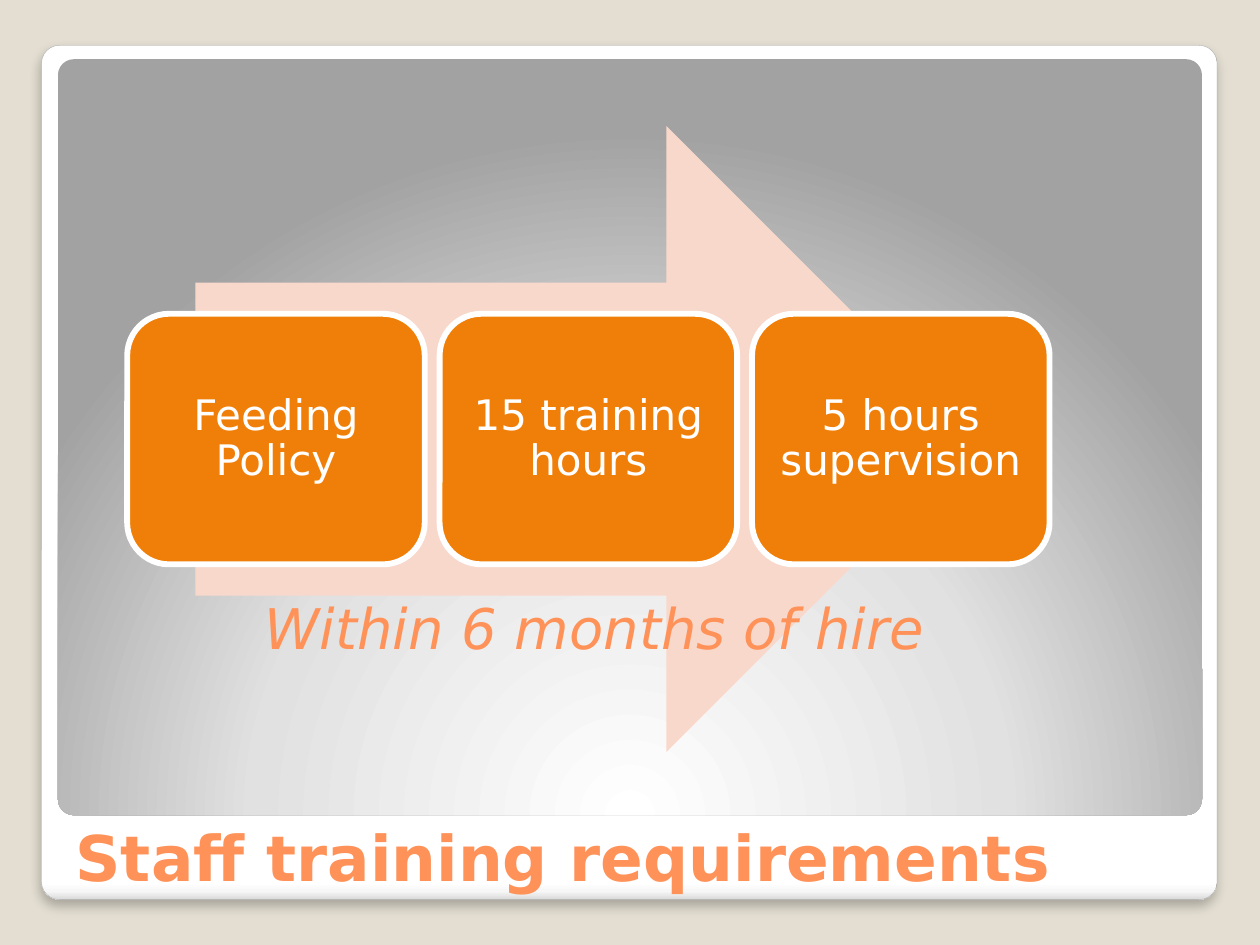
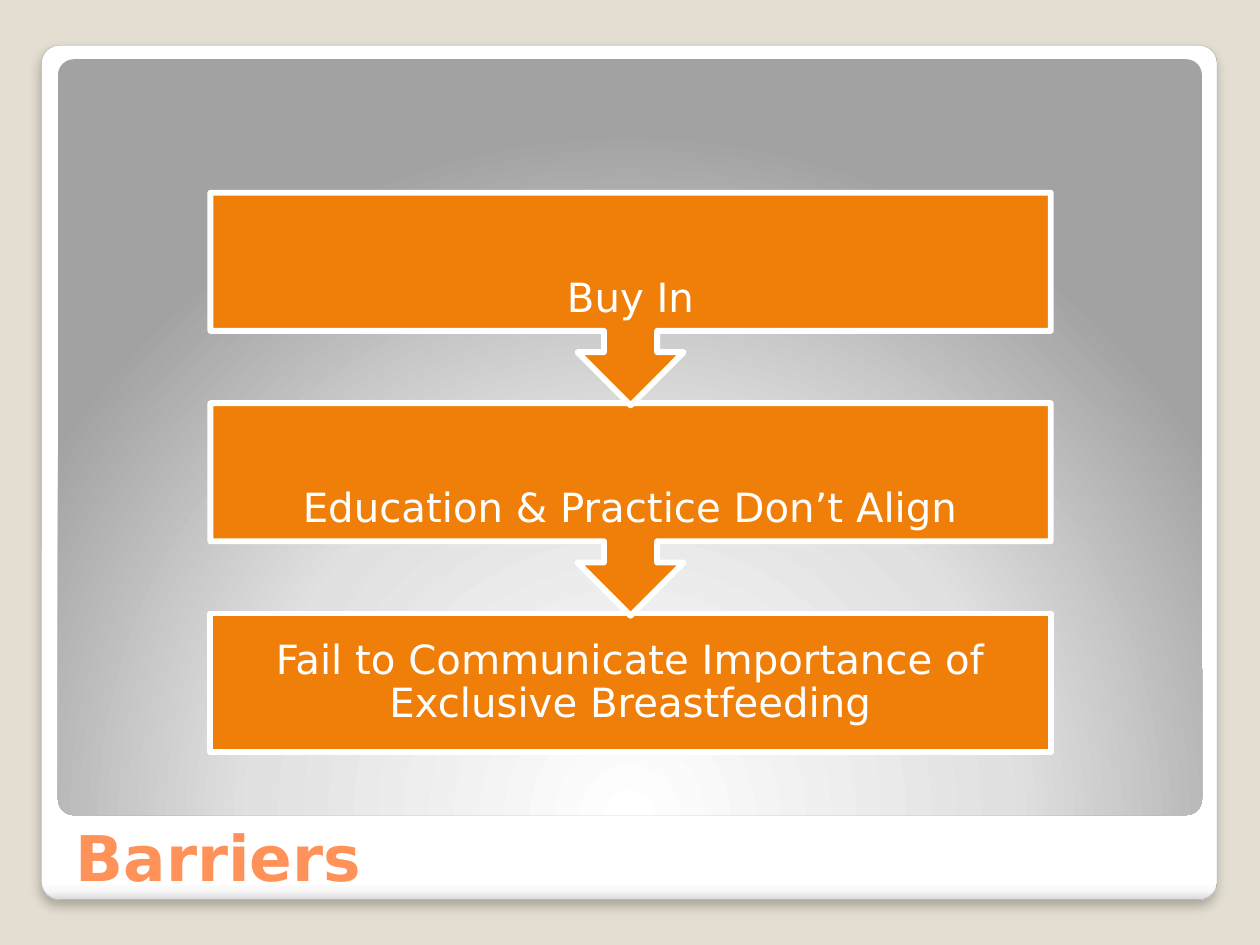
from collections import namedtuple

from lxml import etree
from pptx import Presentation
from pptx.dml.color import RGBColor as Rgb
from pptx.enum.shapes import MSO_SHAPE as Kind
from pptx.enum.text import MSO_ANCHOR as Anchor, MSO_AUTO_SIZE as Auto, PP_ALIGN as Align
from pptx.oxml import parse_xml
from pptx.oxml.ns import nsdecls, qn
from pptx.util import Inches, Pt

FONT = "DejaVu Sans"
WHITE = Rgb(0xFF, 0xFF, 0xFF)
BLACK = Rgb(0, 0, 0)
SAND = Rgb(0xE3, 0xDE, 0xD1)
CORAL = Rgb(0xFF, 0x92, 0x58)
ORANGE = Rgb(0xF0, 0x7F, 0x09)
BLUSH = Rgb(0xF9, 0xD8, 0xCC)
PALE = Rgb(0xF7, 0xF7, 0xF7)
LIGHT = Rgb(0xE1, 0xE1, 0xE1)
MIST = Rgb(0xDA, 0xDA, 0xDA)
GREY = Rgb(0xA2, 0xA2, 0xA2)
EDGE = Rgb(0xA4, 0xA4, 0xA4)

COLS, ROWS = 100, 75
ROUND = 0.021
LINEAR = '<a:lin ang="5400000" scaled="0"/>'
RADIAL = ('<a:path path="circle"><a:fillToRect l="50000" t="175000" '
          'r="50000" b="-75000"/></a:path>')


class Box(namedtuple("Box", "x y w h")):
    def share(self, x, y, w, h):
        return Box(self.x + x * self.w, self.y + y * self.h, w * self.w, h * self.h)

    def cells(self, x, y, w, h):
        return self.share(x / COLS, y / ROWS, w / COLS, h / ROWS)

    def size(self):
        return [Inches(n) for n in self]


PAGE = Box(0, 0, 10, 7.5)


def add_form(slide, kind, box, fill=None, line=None, width=3.35):
    form = slide.shapes.add_shape(kind, *box.size())
    form.shadow.inherit = False
    if fill is None:
        form.fill.background()
    else:
        form.fill.solid()
        form.fill.fore_color.rgb = fill
    if line is None:
        form.line.fill.background()
    else:
        form.line.color.rgb = line
        form.line.width = Pt(width)
    return form


def set_text(form, text, size, color=WHITE, align=Align.CENTER, anchor=Anchor.MIDDLE, pad=None):
    frame = form.text_frame
    frame.word_wrap = True
    frame.auto_size = Auto.NONE
    frame.vertical_anchor = anchor
    if pad is not None:
        frame.margin_left = frame.margin_right = Inches(pad)
        frame.margin_top = frame.margin_bottom = Inches(pad)
    frame.text = text
    para = frame.paragraphs[0]
    para.alignment = align
    para.font.name = FONT
    para.font.size = Pt(size)
    para.font.color.rgb = color
    return para


def set_blend(form, stops, way):
    marks = "".join(
        f'<a:gs pos="{pos * 1000}"><a:srgbClr val="{color}"/></a:gs>' for pos, color in stops)
    blend = parse_xml(
        f'<a:gradFill {nsdecls("a")} rotWithShape="1"><a:gsLst>{marks}</a:gsLst>{way}</a:gradFill>')
    props = form.element.spPr
    props.replace(props.find(qn("a:noFill")), blend)


def set_shade(form):
    glow = etree.SubElement(
        form.element.spPr.find(qn("a:effectLst")), qn("a:outerShdw"),
        blurRad=str(Pt(6)), dist=str(Pt(4)), dir="5400000", rotWithShape="0")
    tone = etree.SubElement(glow, qn("a:srgbClr"), val=str(BLACK))
    etree.SubElement(tone, qn("a:alpha"), val="25000")


def dress(layout, slide):
    fill = layout.background.fill
    fill.solid()
    fill.fore_color.rgb = SAND
    card = add_form(slide, Kind.ROUNDED_RECTANGLE, PAGE.cells(3.3, 3.6, 93.3, 67.8),
                    line=EDGE, width=0.16)
    set_blend(card, [(0, WHITE), (98, WHITE), (99, PALE), (100, MIST)], LINEAR)
    set_shade(card)
    panel = add_form(slide, Kind.ROUNDED_RECTANGLE, PAGE.cells(4.6, 4.7, 90.8, 60))
    set_blend(panel, [(0, WHITE), (55, LIGHT), (100, GREY)], RADIAL)
    tree = layout.shapes.element
    for spot, form in enumerate((card, panel), 2):
        form.adjustments[0] = ROUND
        tree.insert(spot, form.element)
    title = layout.placeholders[0]
    title.left, title.top, title.width, title.height = PAGE.cells(5, 60, 89.5, 11.5).size()


def add_title(slide, text):
    para = set_text(slide.shapes.title, text, 36, CORAL, Align.LEFT, Anchor.BOTTOM)
    para.font.bold = True


def add_cards(slide, box, texts):
    add_form(slide, Kind.RIGHT_ARROW, box.share(0.074, 0, 0.85, 1), BLUSH)
    gap = 0.05
    wide = 1 / (len(texts) + gap * (len(texts) - 1))
    for spot, text in enumerate(texts):
        place = box.share(spot * wide * (1 + gap), 0.3, wide, 0.4)
        card = add_form(slide, Kind.ROUNDED_RECTANGLE, place, ORANGE, WHITE)
        set_text(card, text, 24, pad=0).line_spacing = 0.9


def add_note(slide, box, text):
    note = slide.shapes.add_textbox(*box.size())
    para = set_text(note, text, 32, CORAL, Align.LEFT, Anchor.BOTTOM)
    para.font.italic = True


def add_steps(slide, box, texts):
    base, drop = 0.248, 0.38
    last = len(texts) - 1
    pitch = (1 - base) / last
    for spot in range(last, -1, -1):
        end = spot == last
        kind = Kind.RECTANGLE if end else Kind.DOWN_ARROW_CALLOUT
        place = box.share(0, spot * pitch, 1, base if end else drop)
        step = add_form(slide, kind, place, ORANGE, WHITE)
        para = set_text(step, texts[spot], 23, pad=0.18,
                        anchor=Anchor.MIDDLE if end else Anchor.BOTTOM)
        para.line_spacing = 0.9
        if not end:
            step.text_frame.margin_bottom = Inches(0.08)


def main():
    deck = Presentation()
    deck.slide_width, deck.slide_height = Inches(PAGE.w), Inches(PAGE.h)
    layout = deck.slide_layouts[5]

    staff = deck.slides.add_slide(layout)
    dress(layout, staff)
    add_title(staff, "Staff training requirements")
    add_cards(staff, PAGE.cells(10.1, 10, 73.2, 49.7),
              ["Feeding Policy", "15 training hours", "5 hours supervision"])
    add_note(staff, PAGE.cells(20, 45.6, 57.5, 7.3), "Within 6 months of hire")

    bars = deck.slides.add_slide(layout)
    add_title(bars, "Barriers")
    add_steps(bars, PAGE.cells(16.7, 15.3, 66.7, 44.4),
              ["Buy In", "Education & Practice Don’t Align",
               "Fail to Communicate Importance of Exclusive Breastfeeding"])
    deck.save("out.pptx")


if __name__ == "__main__":
    main()
